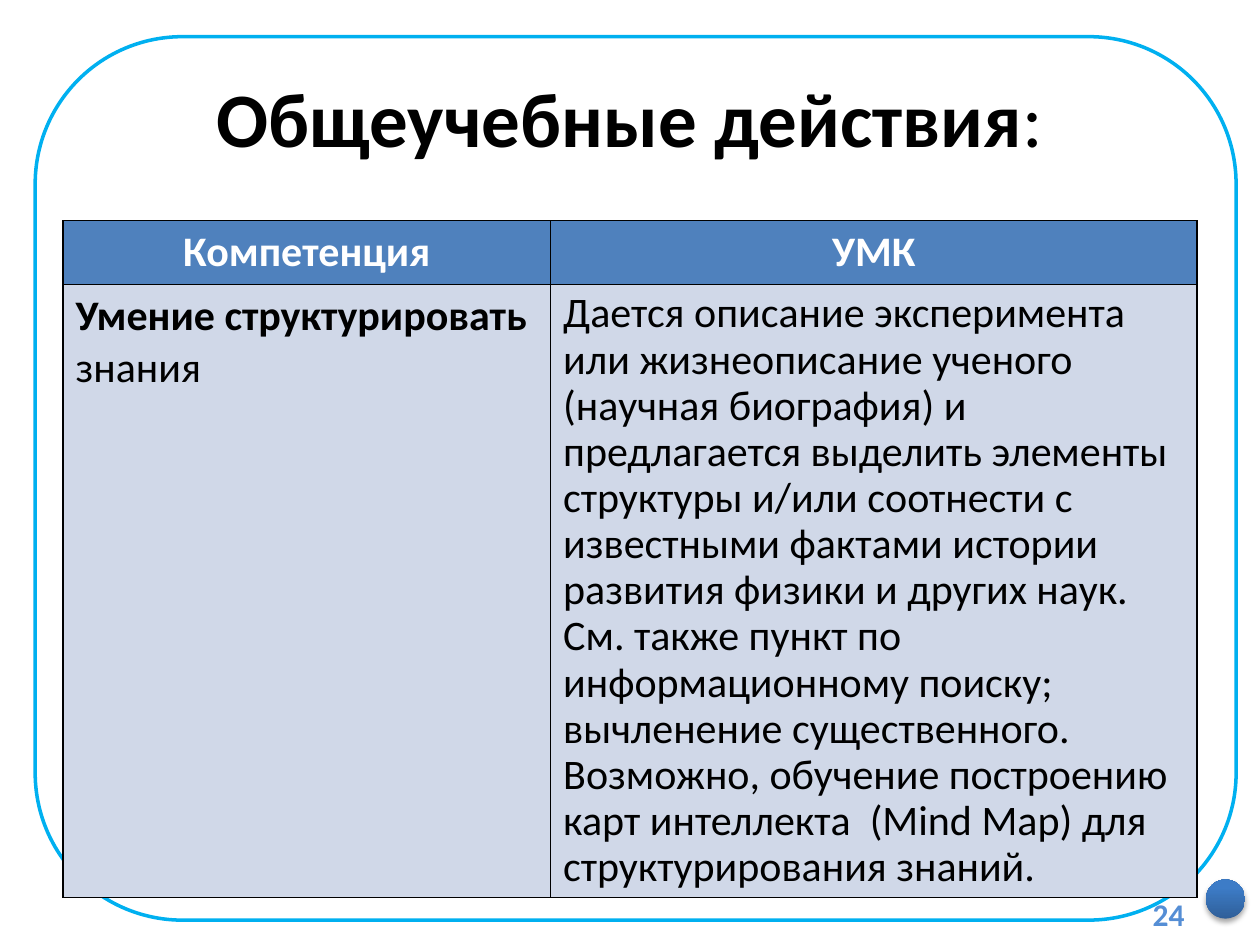
from dataclasses import dataclass

from lxml import etree
from pptx import Presentation
from pptx import util as u
from pptx.dml.color import RGBColor
from pptx.enum import shapes, text
from pptx.oxml import parse_xml
from pptx.oxml.ns import nsdecls, qn

COLORS = {
    "frame": "00B0F0",
    "ball_dark": "2F5F99",
    "ball_light": "3D7CC7",
    "black": "000000",
    "white": "FFFFFF",
    "header": "4F81BD",
    "body": "D0D8E8",
    "number": "558ED5",
}
CENTER, LEFT, RIGHT = text.PP_ALIGN.CENTER, text.PP_ALIGN.LEFT, text.PP_ALIGN.RIGHT


@dataclass(frozen=True)
class Run:
    words: str
    bold: bool = False


@dataclass(frozen=True)
class Cell:
    paragraphs: list[list[Run]]
    fill: str = "body"
    color: str = "black"
    align: int = LEFT
    spacing: float = 1.0


def rgb(name: str) -> RGBColor:
    return RGBColor.from_string(COLORS[name])


def box(left: float, top: float, width: float, height: float) -> list:
    return [u.Cm(side) for side in (left, top, width, height)]


def write(frame, paragraphs: list[list[Run]], size: float, color: str, align: int,
          spacing: float = 1.0) -> None:
    for index, runs in enumerate(paragraphs):
        paragraph = frame.paragraphs[0] if index == 0 else frame.add_paragraph()
        paragraph.alignment = align
        paragraph.line_spacing = spacing
        for part in runs:
            run = paragraph.add_run()
            run.text = part.words
            run.font.color.rgb = rgb(color)
            settings = {"name": "Calibri", "size": u.Pt(size), "bold": part.bold}
            for attribute, value in settings.items():
                setattr(run.font, attribute, value)


def draw_frame(slide) -> None:
    frame = slide.shapes.add_shape(
        shapes.MSO_SHAPE.ROUNDED_RECTANGLE, *box(0.71, 0.74, 24.21, 17.81))
    frame.shadow.inherit = False
    frame.fill.background()
    frame.line.color.rgb = rgb("frame")
    frame.line.width = u.Pt(2)


def draw_ball(slide) -> None:
    ball = slide.shapes.add_shape(shapes.MSO_SHAPE.OVAL, *box(24.31, 17.73, 0.79, 0.79))
    ball.shadow.inherit = False
    ball.line.fill.background()
    ball.fill.gradient()
    ball.fill.gradient_angle = 90
    shades = (("ball_dark", 0), ("ball_light", 0.8))
    for stop, (shade, position) in zip(ball.fill.gradient_stops, shades):
        stop.color.rgb = rgb(shade)
        stop.position = position
    effects = ball.element.spPr.find(qn("a:effectLst"))
    effects.append(parse_xml(
        f'<a:outerShdw {nsdecls("a")} blurRad="{u.Pt(3.1)}" dist="{u.Pt(1.8)}" '
        f'dir="5400000" rotWithShape="0"><a:srgbClr val="{COLORS["black"]}">'
        '<a:alpha val="35000"/></a:srgbClr></a:outerShdw>'))


def draw_borders(cell) -> None:
    properties = cell._tc.get_or_add_tcPr()
    for index, side in enumerate(("lnL", "lnR", "lnT", "lnB")):
        border = etree.Element(qn(f"a:{side}"), w=str(u.Pt(1)))
        solid = etree.SubElement(border, qn("a:solidFill"))
        etree.SubElement(solid, qn("a:srgbClr"), val=COLORS["black"])
        properties.insert(index, border)


def draw_table(slide, rows: list[list[Cell]]) -> None:
    table = slide.shapes.add_table(
        len(rows), len(rows[0]), *box(1.27, 4.45, 22.86, 13.64)).table
    for column, width in zip(table.columns, (9.83, 13.03)):
        column.width = u.Cm(width)
    for row, height in zip(table.rows, (1.29, 12.35)):
        row.height = u.Cm(height)
    for row, contents in zip(table.rows, rows):
        for cell, content in zip(row.cells, contents):
            cell.fill.solid()
            cell.fill.fore_color.rgb = rgb(content.fill)
            draw_borders(cell)
            write(cell.text_frame, content.paragraphs, 24, content.color,
                  content.align, content.spacing)


def heading(words: str) -> Cell:
    return Cell([[Run(words, True)]], "header", "white", CENTER)


COMPETENCES = [
    [heading("Компетенция"), heading("УМК")],
    [
        Cell([[Run("Умение структурировать", True), Run(" знания")]]),
        Cell([
            [Run("Дается описание эксперимента или жизнеописание ученого "
                 "(научная биография) и предлагается выделить элементы структуры "
                 "и/или соотнести с известными фактами истории развития физики "
                 "и других наук.")],
            [Run("См. также пункт по информационному поиску; вычленение "
                 "существенного. Возможно, обучение построению карт интеллекта  "
                 "(Mind Map) для структурирования знаний.")],
        ], spacing=0.9),
    ],
]


def main() -> None:
    deck = Presentation()
    deck.slide_width, deck.slide_height = u.Cm(25.4), u.Cm(19.05)
    slide = deck.slides.add_slide(deck.slide_layouts[5])

    draw_frame(slide)
    draw_ball(slide)

    title = slide.shapes.title
    sides = ("left", "top", "width", "height")
    for side, length in zip(sides, box(1.27, 0.76, 22.86, 3.18)):
        setattr(title, side, length)
    title.text_frame.vertical_anchor = text.MSO_ANCHOR.MIDDLE
    write(title.text_frame, [[Run("Общеучебные действия", True), Run(":")]],
          44, "black", CENTER)

    draw_table(slide, COMPETENCES)

    number = slide.shapes.add_textbox(*box(22.71, 17.91, 1.42, 1.02)).text_frame
    number.word_wrap = True
    number.vertical_anchor = text.MSO_ANCHOR.MIDDLE
    write(number, [[Run("24", True)]], 18, "number", RIGHT)

    deck.save("out.pptx")


if __name__ == "__main__":
    main()
